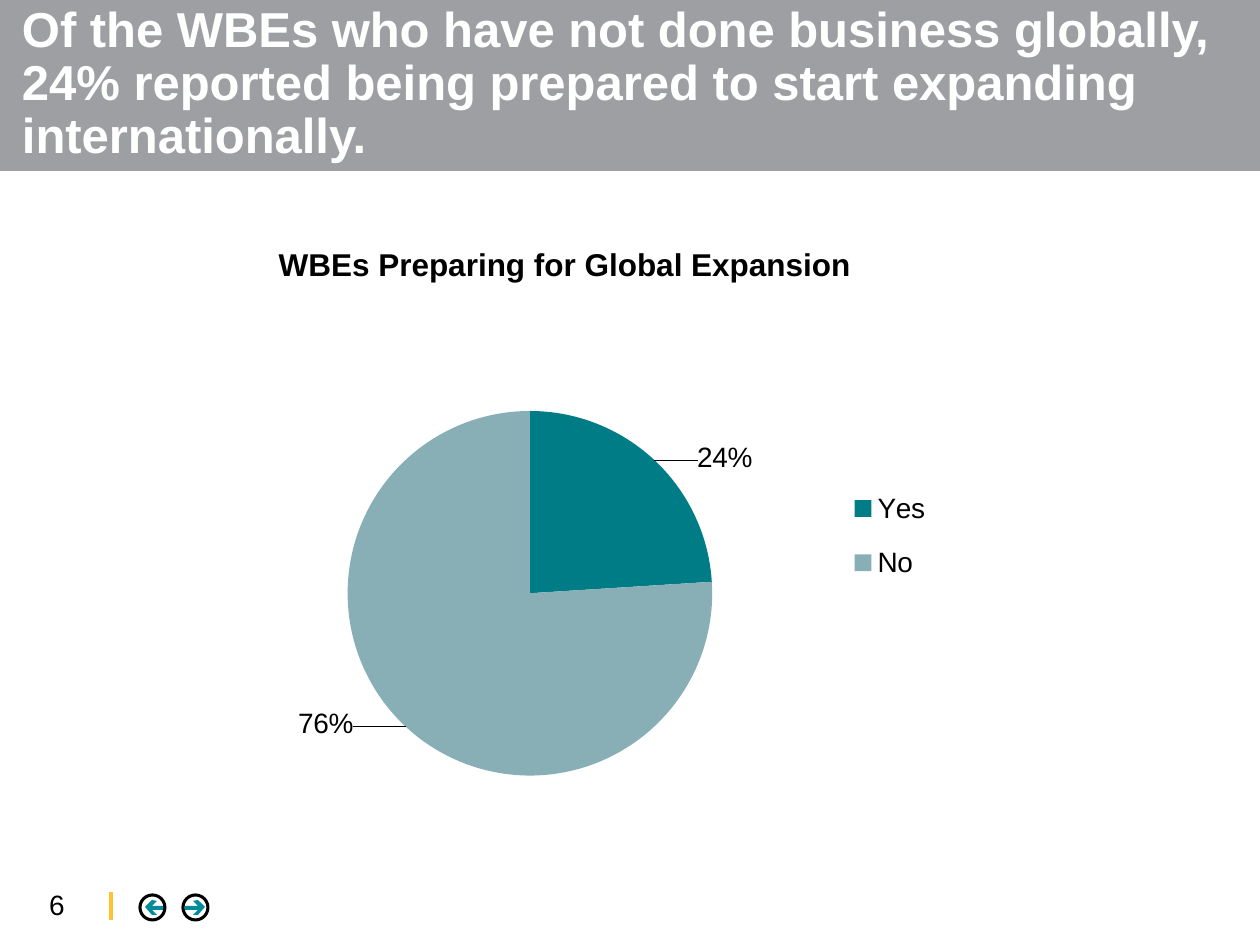
"""Build the slide on global expansion of WBEs."""
from lxml import etree
from pptx import Presentation, util as u
from pptx.chart.data import CategoryChartData
from pptx.dml.color import RGBColor
from pptx.enum import chart as c, shapes as s, text as t
from pptx.oxml import parse_xml
from pptx.oxml.ns import nsdecls, qn

PX = 914400 // 126
FONT = "Arial"
BLACK = RGBColor(0, 0, 0)
WHITE = RGBColor(255, 255, 255)
GRAY = RGBColor(0x9D, 0x9F, 0xA2)
YELLOW = RGBColor(0xFE, 0xC2, 0x32)
ARROW_TEAL = RGBColor(0x00, 0x8C, 0x99)
YES_TEAL = RGBColor(0x00, 0x7C, 0x87)
NO_TEAL = RGBColor(0x88, 0xAF, 0xB6)
ARROW = ((0, 906), (13, 906), (8, 901), (13, 900), (20, 907),
         (13, 915), (8, 915), (13, 910), (0, 910))


def px(*lengths):
    """Turn pixel lengths into EMU."""
    return [length * PX for length in lengths]


def style_font(font, size, color=BLACK, bold=False):
    """Set the face, size, colour and weight of a font."""
    font.name, font.size, font.bold = FONT, u.Pt(size), bold
    font.color.rgb = color


def add_text(slide, box, content, size, color=BLACK, bold=False,
             anchor=t.MSO_ANCHOR.TOP, spacing=1.0):
    """Add a wrapped text box without insets."""
    frame = slide.shapes.add_textbox(*px(*box)).text_frame
    frame.word_wrap = True
    frame.vertical_anchor = anchor
    frame.margin_left = frame.margin_right = 0
    frame.margin_top = frame.margin_bottom = 0
    frame.text = content
    paragraph = frame.paragraphs[0]
    paragraph.line_spacing = spacing
    style_font(paragraph.runs[0].font, size, color, bold)


def add_band(slide, top, height):
    """Add a full-width gray band."""
    band = slide.shapes.add_shape(s.MSO_SHAPE.RECTANGLE, *px(0, top, 1260, height))
    band.shadow.inherit = False
    band.fill.solid()
    band.fill.fore_color.rgb = GRAY
    band.line.fill.background()


def add_divider(slide, x, top, bottom):
    """Add the vertical line beside the page number."""
    line = slide.shapes.add_connector(s.MSO_CONNECTOR.STRAIGHT, *px(x, top, x, bottom))
    line.line.color.rgb = YELLOW
    line.line.width = u.Pt(2)
    etree.SubElement(line._element.spPr, qn("a:effectLst"))


def add_arrow_button(slide, circle_left, tail, direction):
    """Add a circled arrow; direction is 1 for right and -1 for left."""
    points = [px(tail + direction * x, y) for x, y in ARROW]
    builder = slide.shapes.build_freeform(*points[0])
    builder.add_line_segments(points[1:])
    arrow = builder.convert_to_shape()
    arrow.fill.solid()
    arrow.fill.fore_color.rgb = ARROW_TEAL
    arrow.line.fill.background()
    circle = slide.shapes.add_shape(s.MSO_SHAPE.OVAL, *px(circle_left, 895, 25, 25))
    circle.fill.background()
    circle.line.color.rgb = BLACK
    circle.line.width = u.Pt(1.75)
    for shape in (arrow, circle):
        shape.shadow.inherit = False


def layout(x, y, width=None, height=None, inner=False, edge=True):
    """Make a manual chart layout from fractions of the chart."""
    values = [("layoutTarget", "inner")] if inner else []
    if edge:
        values += [("xMode", "edge"), ("yMode", "edge")]
    values += [("x", x), ("y", y)]
    if width:
        values += [("w", width), ("h", height)]
    body = "".join(f'<c:{name} val="{value}"/>' for name, value in values)
    return parse_xml(f'<c:layout {nsdecls("c")}><c:manualLayout>{body}'
                     '</c:manualLayout></c:layout>')


def set_layout(element, new_layout, predecessor=None):
    """Put a layout into a chart element, after the named child if given."""
    for old in element.findall(qn("c:layout")):
        element.remove(old)
    before = element.find(qn(predecessor)) if predecessor else None
    element.insert(0 if before is None else element.index(before) + 1, new_layout)


def label_slices(series, offsets):
    """Show percentages, moved off the slices, with leader lines."""
    labels = series.data_labels
    labels.show_value = False
    labels.show_percentage = True
    labels.number_format = "0%"
    labels.number_format_is_linked = False
    labels.position = c.XL_LABEL_POSITION.OUTSIDE_END
    style_font(labels.font, 16)
    element = labels._element
    leader = element.find(qn("c:showLeaderLines"))
    if leader is None:
        leader = etree.SubElement(element, qn("c:showLeaderLines"))
    leader.set("val", "1")
    for index, offset in enumerate(offsets):
        label = series.points[index].data_label
        label.position = c.XL_LABEL_POSITION.OUTSIDE_END
        style_font(label.font, 16)
        item = element.findall(qn("c:dLbl"))[index]
        item.find(qn("c:showVal")).set("val", "0")
        item.find(qn("c:showPercent")).set("val", "1")
        set_layout(item, layout(*offset, edge=False), "c:idx")
        item.insert(2, parse_xml(
            f'<c:numFmt {nsdecls("c")} formatCode="0%" sourceLinked="0"/>'))


def add_pie(slide):
    """Add the pie chart with its title, legend and labels."""
    data = CategoryChartData()
    data.categories = ["Yes", "No"]
    data.add_series("Series 1", (24, 76))
    chart = slide.shapes.add_chart(c.XL_CHART_TYPE.PIE, *px(142, 227, 935, 577), data).chart
    style_font(chart.font, 10)
    chart.has_title = True
    title = chart.chart_title
    title.text_frame.text = "WBEs Preparing for Global Expansion"
    style_font(title.text_frame.paragraphs[0].runs[0].font, 18, bold=True)
    set_layout(title._element, layout(0.14, 0.02), "c:tx")
    chart.has_legend = True
    legend = chart.legend
    legend.position = c.XL_LEGEND_POSITION.RIGHT
    legend.include_in_layout = False
    style_font(legend.font, 16)
    set_layout(legend._element, layout(0.74, 0.42, 0.12, 0.23), "c:legendPos")
    plot = chart.plots[0]
    plot.vary_by_categories = True
    set_layout(chart._chartSpace.chart.plotArea, layout(0.22, 0.27, 0.39, 0.73, inner=True))
    series = plot.series[0]
    for index, color in enumerate((YES_TEAL, NO_TEAL)):
        fill = series.points[index].format.fill
        fill.solid()
        fill.fore_color.rgb = color
    label_slices(series, ((0.04, 0.03), (-0.05, -0.04)))


def main():
    """Build and save the slide."""
    presentation = Presentation()
    presentation.slide_width, presentation.slide_height = px(1260, 945)
    slide = presentation.slides.add_slide(presentation.slide_layouts[6])
    add_text(slide, (49, 888, 68, 34), "6", 16)
    add_divider(slide, 111, 892, 920)
    add_arrow_button(slide, 183, 185, 1)
    add_arrow_button(slide, 140, 165, -1)
    add_band(slide, 0, 112)
    add_band(slide, 107, 64)
    add_text(slide, (22, 30, 1216, 110),
             "Of the WBEs who have not done business globally, 24% reported "
             "being prepared to start expanding internationally.",
             28, WHITE, True, t.MSO_ANCHOR.MIDDLE, 0.9)
    add_pie(slide)
    presentation.save("out.pptx")


if __name__ == "__main__":
    main()
